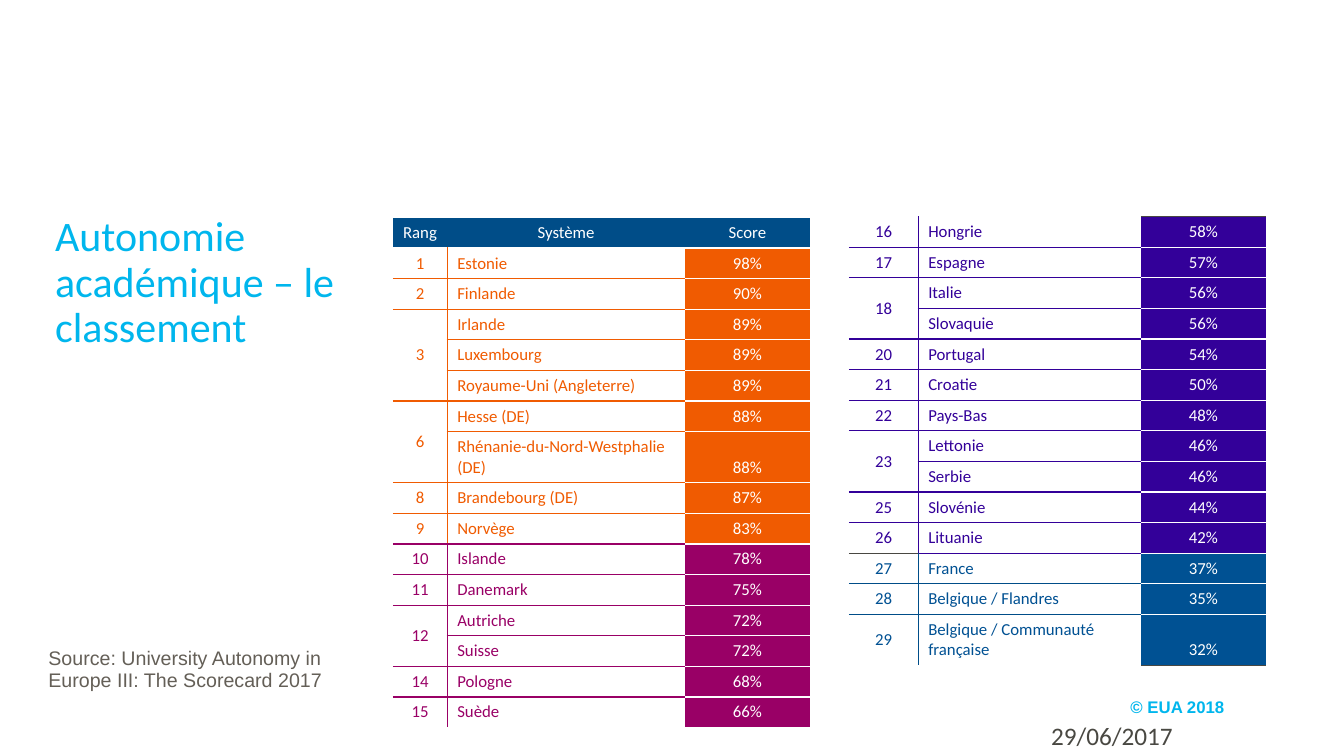
from lxml import etree
from pptx import Presentation
from pptx.dml.color import RGBColor
from pptx.enum.text import MSO_ANCHOR as Anchor, PP_ALIGN as Align
from pptx.oxml.ns import qn
from pptx.util import Cm, Pt

COLORS = {
    "white": "FFFFFF", "cyan": "00B6ED", "grey": "494842", "taupe": "645F57",
    "navy": "004D88", "blue": "005193", "orange": "F05B01",
    "purple": "990066", "violet": "330099",
}
PLAIN_STYLE = "{2D5ABB26-0587-4C30-8999-92F81FD0307C}"
ROW_HEIGHT, TALL_ROW_HEIGHT = Cm(0.77), Cm(1.28)

# Rank (empty when shared with the row above), system, score, band colour
TOP_ROWS = [
    ("Rang", "Système", "Score", "navy"),
    ("1", "Estonie", "98%", "orange"),
    ("2", "Finlande", "90%", "orange"),
    ("3", "Irlande", "89%", "orange"),
    ("", "Luxembourg", "89%", "orange"),
    ("", "Royaume-Uni (Angleterre)", "89%", "orange"),
    ("6", "Hesse (DE)", "88%", "orange"),
    ("", "Rhénanie-du-Nord-Westphalie (DE)", "88%", "orange"),
    ("8", "Brandebourg (DE)", "87%", "orange"),
    ("9", "Norvège", "83%", "orange"),
    ("10", "Islande", "78%", "purple"),
    ("11", "Danemark", "75%", "purple"),
    ("12", "Autriche", "72%", "purple"),
    ("", "Suisse", "72%", "purple"),
    ("14", "Pologne", "68%", "purple"),
    ("15", "Suède", "66%", "purple"),
]
BOTTOM_ROWS = [
    ("16", "Hongrie", "58%", "violet"),
    ("17", "Espagne", "57%", "violet"),
    ("18", "Italie", "56%", "violet"),
    ("", "Slovaquie", "56%", "violet"),
    ("20", "Portugal", "54%", "violet"),
    ("21", "Croatie", "50%", "violet"),
    ("22", "Pays-Bas", "48%", "violet"),
    ("23", "Lettonie", "46%", "violet"),
    ("", "Serbie", "46%", "violet"),
    ("25", "Slovénie", "44%", "violet"),
    ("26", "Lituanie", "42%", "violet"),
    ("27", "France", "37%", "blue"),
    ("28", "Belgique / Flandres", "35%", "blue"),
    ("29", "Belgique / Communauté française", "32%", "blue"),
]
TALL_SYSTEMS = {"Rhénanie-du-Nord-Westphalie (DE)", "Belgique / Communauté française"}

# Left, top, column widths, rows
TABLES = [
    (9.9, 5.48, (1.37, 5.99, 3.15), TOP_ROWS),
    (21.39, 5.46, (1.75, 5.61, 3.15), BOTTOM_ROWS),
]

# Left, top, width, height, text, font name, size, colour, bold, line spacing, anchor
TEXTS = [
    (28.24, 17.3, 2.87, 1.02, "© EUA 2018", "Arial", 12, "cyan", True, 1, Anchor.MIDDLE),
    (1.14, 5.31, 8.28, 8.43, "Autonomie académique – le classement",
     "Calibri", 30, "cyan", False, 0.9, Anchor.TOP),
    (26.24, 18.03, 7.62, 1.02, "29/06/2017", "Calibri", 18, "grey", False, 1, Anchor.TOP),
    (0.97, 16.23, 7.98, 2.31, "Source: University Autonomy in Europe III: The Scorecard 2017",
     "Arial", 14, "taupe", False, 0.9, Anchor.TOP),
]


def style_paragraph(paragraph, font_name, size, color, bold=False):
    font = paragraph.font
    font.name, font.size, font.bold = font_name, Pt(size), bold
    font.color.rgb = RGBColor.from_string(COLORS[color])


def add_borders(cell, borders):
    """Draw a 1 pt line on each edge (lnL, lnR, lnT, lnB in order) that has a colour."""
    properties = cell._tc.get_or_add_tcPr()
    for edge, color in borders.items():
        line = etree.SubElement(properties, qn(f"a:{edge}"), w=str(Pt(1)))
        if color:
            fill = etree.SubElement(line, qn("a:solidFill"))
            etree.SubElement(fill, qn("a:srgbClr"), val=COLORS[color])
        else:
            etree.SubElement(line, qn("a:noFill"))


presentation = Presentation()
presentation.slide_width, presentation.slide_height = Cm(33.87), Cm(19.05)
slide = presentation.slides.add_slide(presentation.slide_layouts[6])

for left, top, widths, rows in TABLES:
    heights = [TALL_ROW_HEIGHT if row[1] in TALL_SYSTEMS else ROW_HEIGHT for row in rows]
    frame = slide.shapes.add_table(len(rows), 3, Cm(left), Cm(top),
                                   Cm(sum(widths)), sum(heights))
    table = frame.table
    table.first_row = table.horz_banding = False
    table._tbl.tblPr.find(qn("a:tableStyleId")).text = PLAIN_STYLE
    for column, width in zip(table.columns, widths):
        column.width = Cm(width)
    for table_row, height in zip(table.rows, heights):
        table_row.height = height

    # Colours of the horizontal lines: one triple above each row and one below the last
    lines = [["white"] * 3 for _ in range(len(rows) + 1)]
    for number, (rank, system, score, band) in enumerate(rows):
        if number and rows[number - 1][3] != "navy":
            line_color = "navy" if band == "blue" else band
            lines[number][:2] = [line_color if rank else None, line_color]
        if system == "France":
            lines[number][:2] = ["grey", "violet"]
    if rows is BOTTOM_ROWS:
        lines[0][2] = lines[-1][2] = "grey"

    for number, (rank, system, score, band) in enumerate(rows):
        is_header = band == "navy"
        vertical = None if is_header else "navy" if band == "blue" else band
        span = 1
        while rank and number + span < len(rows) and not rows[number + span][0]:
            span += 1
        if span > 1:
            table.cell(number, 0).merge(table.cell(number + span - 1, 0))
        for position, text in enumerate((rank, system, score)):
            cell = table.cell(number, position)
            below = number + (span if position == 0 else 1)
            add_borders(cell, {
                "lnL": vertical if position == 1 else None,
                "lnR": vertical if position == 0 else None,
                "lnT": lines[number][position],
                "lnB": lines[below][position],
            })
            filled = is_header or position == 2
            cell.fill.solid()
            cell.fill.fore_color.rgb = RGBColor.from_string(COLORS[band if filled else "white"])
            if not text:
                continue
            cell.text = text
            if not is_header:
                cell.vertical_anchor = Anchor.MIDDLE if position == 0 else Anchor.BOTTOM
            paragraph = cell.text_frame.paragraphs[0]
            paragraph.alignment = Align.LEFT if position == 1 and not is_header else Align.CENTER
            style_paragraph(paragraph, "Calibri", 12, "white" if filled else band)

for left, top, width, height, text, font_name, size, color, bold, spacing, anchor in TEXTS:
    text_frame = slide.shapes.add_textbox(Cm(left), Cm(top), Cm(width), Cm(height)).text_frame
    text_frame.word_wrap = True
    text_frame.vertical_anchor = anchor
    paragraph = text_frame.paragraphs[0]
    paragraph.text = text
    paragraph.line_spacing = spacing
    style_paragraph(paragraph, font_name, size, color, bold)

presentation.save("out.pptx")
